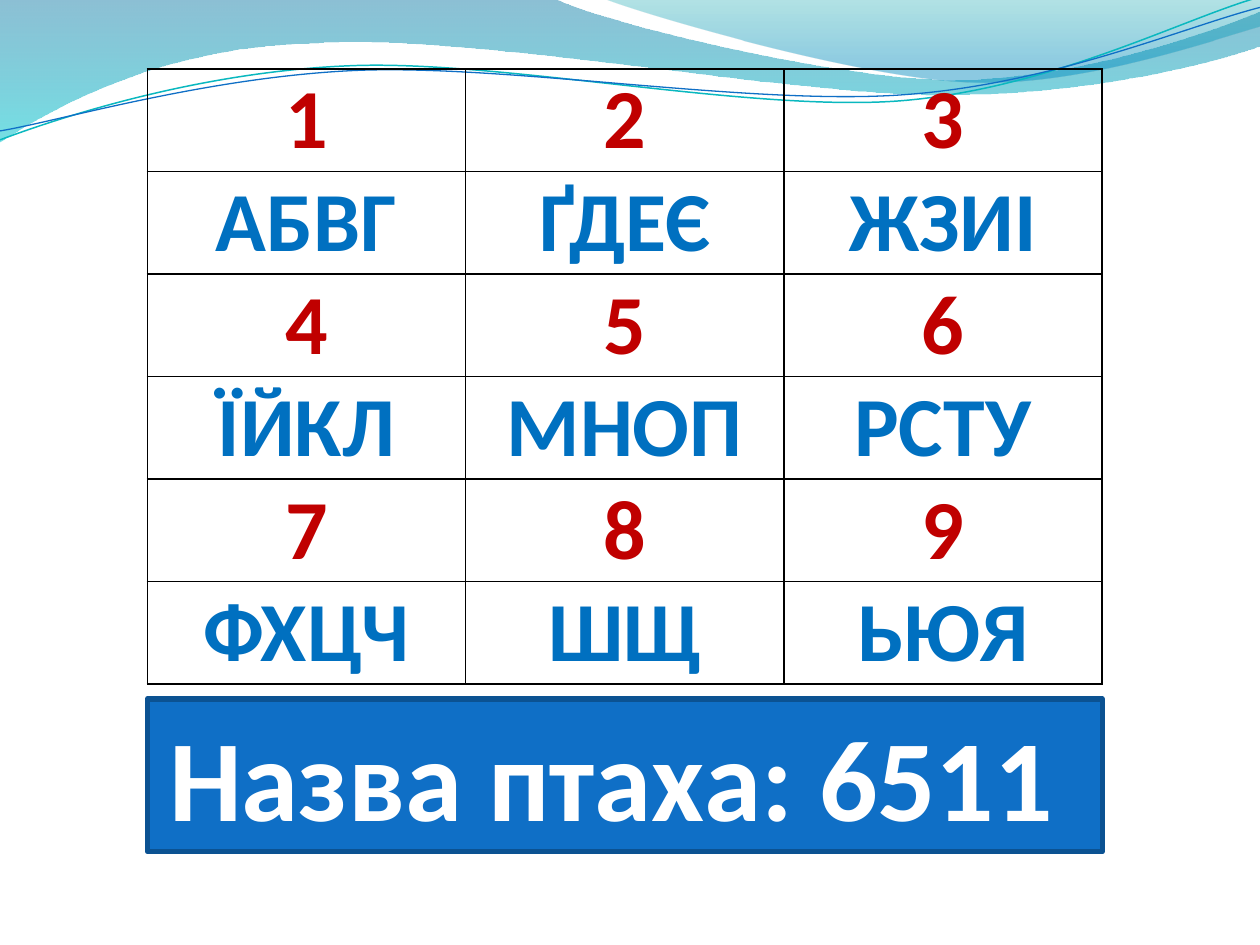
from itertools import product

from lxml.etree import Element, SubElement
from pptx import Presentation
from pptx.dml.color import RGBColor
from pptx.enum.shapes import MSO_SHAPE
from pptx.enum.text import MSO_ANCHOR, PP_ALIGN
from pptx.oxml.ns import qn
from pptx.util import Cm, Pt

KEYPAD = [
    ["1", "2", "3"],
    ["АБВГ", "ҐДЕЄ", "ЖЗИІ"],
    ["4", "5", "6"],
    ["ЇЙКЛ", "МНОП", "РСТУ"],
    ["7", "8", "9"],
    ["ФХЦЧ", "ШЩ", "ЬЮЯ"],
]
BACK_WAVE = [
    (0, 0), (11.18, -0.03),
    (12.09, 0.43, 16.87, 1.6, 19.25, 1.6),
    (21.67, 1.6, 24.33, 0.66, 25.4, 0.23), (25.43, 0.91),
    (24.97, 1.12, 22.1, 1.93, 18.95, 1.91),
    (15.8, 1.91, 9.7, 0.71, 6.53, 0.86),
    (3.28, 0.91, 1.17, 2.11, -0.03, 2.87), (0, 0),
]
FRONT_WAVE = [
    (12.17, -0.03),
    (12.93, 0.28, 17.32, 1.57, 19.53, 1.65),
    (21.74, 1.75, 24.41, 0.81, 25.4, 0.53), (25.4, 0), (12.17, -0.03),
]
TEAL_STRAND = [
    (-0.05, 2.22),
    (1.19, 1.82, 4.02, 1.04, 7.05, 1.06),
    (10.05, 1.07, 15.02, 2.37, 18.08, 2.29),
    (21.13, 2.2, 23.87, 0.91, 25.41, 0.55),
]
BLUE_STRAND = [
    (-0.04, 2.04),
    (1.16, 1.9, 4.18, 1.15, 7.2, 1.16),
    (10.25, 1.18, 15.13, 2.25, 18.18, 2.17),
    (21.21, 2.1, 23.93, 1.06, 25.45, 0.75),
]


def color(hex_string):
    """Turn a hex string into a colour."""
    return RGBColor.from_string(hex_string)


def add_solid_line(parent, tag, hex_string, width):
    """Append a solid line element of the given tag and width."""
    line = SubElement(parent, qn(tag), w=str(Pt(width)))
    fill = SubElement(line, qn("a:solidFill"))
    SubElement(fill, qn("a:srgbClr"), val=hex_string)
    return line


def add_outline(slide, segments, close):
    """Draw a freeform of straight and cubic segments without shadow."""
    anchors = [(Cm(segment[-2]), Cm(segment[-1])) for segment in segments]
    builder = slide.shapes.build_freeform(*anchors[0], scale=1.0)
    builder.add_line_segments(anchors[1:], close=close)
    outline = builder.convert_to_shape()
    outline.shadow.inherit = False
    steps = list(outline._element.spPr.iter(qn("a:lnTo")))
    for step, segment in zip(steps, segments[1:]):
        if len(segment) == 6:
            step.tag = qn("a:cubicBezTo")
            for index in (0, 1):
                x, y = segment[2 * index:2 * index + 2]
                step.insert(index, Element(
                    qn("a:pt"), x=str(Cm(x) - outline.left), y=str(Cm(y) - outline.top)
                ))
    return outline


def add_wave(slide, segments, stops):
    """Draw a wave with a translucent gradient running downwards."""
    wave = add_outline(slide, segments, close=True)
    wave.line.fill.background()
    wave.fill.gradient()
    wave.fill.gradient_angle = 270
    for stop, (position, hex_string, _) in zip(wave.fill.gradient_stops, stops):
        stop.position = position
        stop.color.rgb = color(hex_string)
    tints = list(wave._element.spPr.iter(qn("a:srgbClr")))
    for tint, (_, _, opacity) in zip(tints, stops):
        SubElement(tint, qn("a:alpha"), val=str(opacity * 1000))


def add_strand(slide, segments, hex_string, width):
    """Draw a thin, slightly turned curved line."""
    strand = add_outline(slide, segments, close=False)
    strand.rotation = 357.3
    strand.fill.background()
    strand.line.color.rgb = color(hex_string)
    strand.line.width = Pt(width)


def write(frame, text, *, size, hex_string, edge=None):
    """Write centred bold text with an optional letter outline."""
    paragraph = frame.paragraphs[0]
    paragraph.alignment = PP_ALIGN.CENTER
    run = paragraph.add_run()
    run.text = text
    run.font.name = "Calibri"
    run.font.size = Pt(size)
    run.font.bold = True
    run.font.color.rgb = color(hex_string)
    if edge:
        properties = run._r.get_or_add_rPr()
        properties.insert(0, add_solid_line(properties, "a:ln", edge, 0.83))


def add_keypad(slide):
    """Add the table that pairs digits with letters."""
    rows, columns = len(KEYPAD), len(KEYPAD[0])
    keypad = slide.shapes.add_table(
        rows, columns, Cm(2.97), Cm(1.39), Cm(19.25), Cm(12.18)
    ).table
    keypad.first_row = keypad.horz_banding = False
    for row, column in product(range(rows), range(columns)):
        cell = keypad.cell(row, column)
        cell.margin_left = cell.margin_right = Cm(0.18)
        cell.margin_top = cell.margin_bottom = 0
        for side in "LRTB":
            add_solid_line(cell._tc.get_or_add_tcPr(), f"a:ln{side}", "000000", 1)
        cell.fill.background()
        letters = row % 2
        write(
            cell.text_frame, KEYPAD[row][column], size=48,
            hex_string="0070C0" if letters else "C00000",
            edge="0669C4" if letters else "000000",
        )


def add_riddle(slide):
    """Add the banner with the coded bird name."""
    banner = slide.shapes.add_shape(
        MSO_SHAPE.RECTANGLE, Cm(2.97), Cm(14.09), Cm(19.25), Cm(3.08)
    )
    banner.shadow.inherit = False
    banner.fill.solid()
    banner.fill.fore_color.rgb = color("0F6FC6")
    banner.line.color.rgb = color("0B5292")
    banner.line.width = Pt(3)
    frame = banner.text_frame
    frame.vertical_anchor = MSO_ANCHOR.MIDDLE
    frame.margin_right = Cm(0.78)
    write(frame, "Назва птаха: 6511", size=66, hex_string="FFFFFF")


def main():
    """Build the slide and save it."""
    presentation = Presentation()
    presentation.slide_width, presentation.slide_height = Cm(25.4), Cm(19.05)
    slide = presentation.slides.add_slide(presentation.slide_layouts[6])
    add_wave(slide, BACK_WAVE, [(0, "0074A1", 45), (1, "00C6CF", 55)])
    add_wave(slide, FRONT_WAVE, [(0, "00A1A9", 30), (0.8, "008BBF", 45)])
    add_strand(slide, TEAL_STRAND, "0AB8BF", 0.85)
    add_strand(slide, BLUE_STRAND, "0F6FC6", 0.75)
    add_keypad(slide)
    add_riddle(slide)
    presentation.save("out.pptx")


if __name__ == "__main__":
    main()
